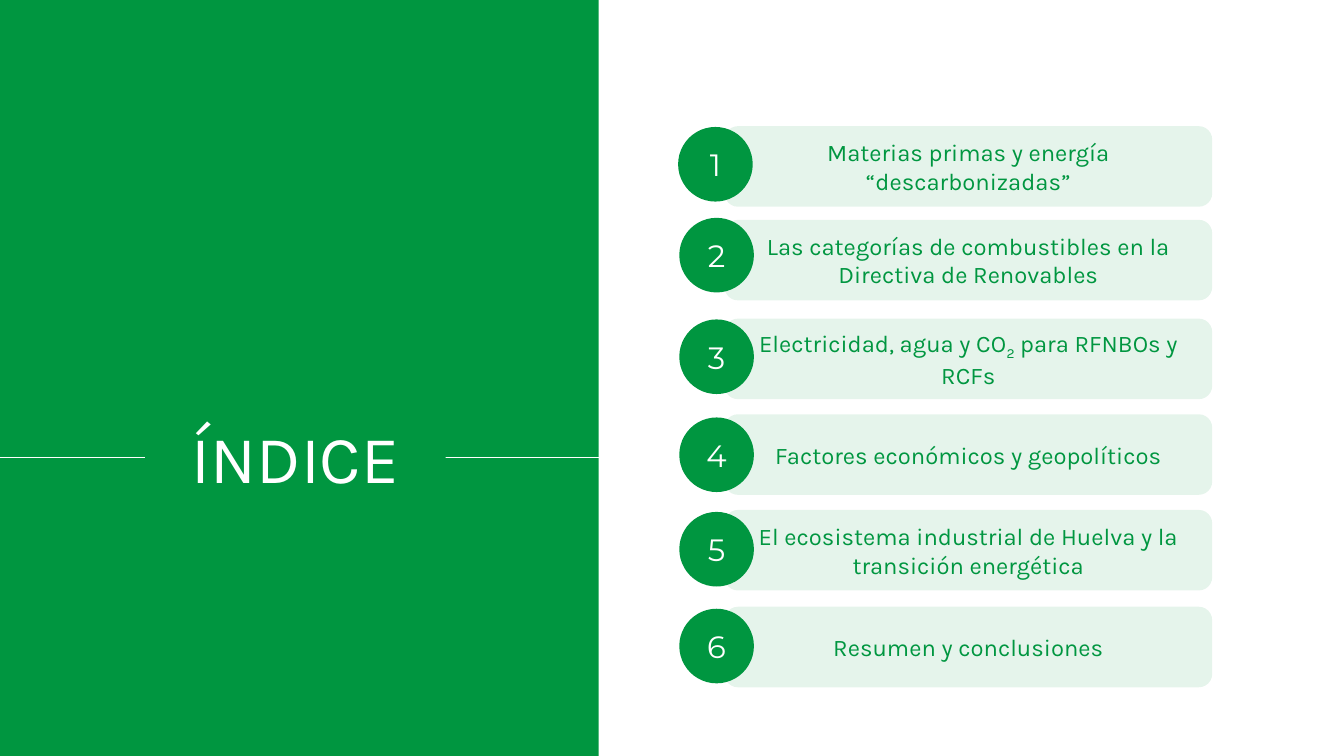
from dataclasses import dataclass

from lxml import etree
from pptx import Presentation
from pptx.dml.color import RGBColor
from pptx.enum.shapes import MSO_CONNECTOR, MSO_SHAPE
from pptx.enum.text import MSO_ANCHOR, MSO_AUTO_SIZE, PP_ALIGN
from pptx.oxml.ns import qn
from pptx.shapes.autoshape import Shape
from pptx.slide import Slide
from pptx.text.text import _Paragraph as Paragraph
from pptx.util import Cm, Pt

RECTANGLE = MSO_SHAPE.RECTANGLE
ROUNDED = MSO_SHAPE.ROUNDED_RECTANGLE
OVAL = MSO_SHAPE.OVAL
STRAIGHT = MSO_CONNECTOR.STRAIGHT
CENTER = PP_ALIGN.CENTER
MIDDLE = MSO_ANCHOR.MIDDLE
TOP = MSO_ANCHOR.TOP
FIT_SHAPE = MSO_AUTO_SIZE.SHAPE_TO_FIT_TEXT

GREEN = "009640"
WHITE = "FFFFFF"
PANEL_WIDTH = 15.09
SLIDE_HEIGHT = 19.05
RULE_Y = 11.53
BADGE_SIZE = 1.88
BAR_LEFT, BAR_WIDTH, BAR_HEIGHT = 18.26, 12.29, 2.03
BAR_OPACITY = 10


@dataclass(frozen=True)
class Entry:
    """An index entry; every second piece of its text is a subscript."""
    badge_top: float
    bar_top: float
    pieces: tuple[str, ...]
    badge_left: float = 17.12


ENTRIES = (
    Entry(3.2, 3.18, ("Materias primas y energía “descarbonizadas”",), 17.09),
    Entry(5.49, 5.54, ("Las categorías de combustibles en la Directiva de Renovables",)),
    Entry(8.05, 8.03, ("Electricidad, agua y CO", "2", " para RFNBOs y RCFs")),
    Entry(10.52, 10.44, ("Factores económicos y geopolíticos",)),
    Entry(12.9, 12.85, ("El ecosistema industrial de Huelva y la transición energética",)),
    Entry(15.34, 15.29, ("Resumen y conclusiones",)),
)


def color(value: str) -> RGBColor:
    return RGBColor.from_string(value)


def format_paragraph(paragraph: Paragraph, font: str, size: float, ink: str) -> None:
    paragraph.alignment = CENTER
    paragraph.font.name = font
    paragraph.font.size = Pt(size)
    paragraph.font.color.rgb = color(ink)


def add_green_shape(slide: Slide, kind: MSO_SHAPE, left: float, top: float,
                    width: float, height: float) -> Shape:
    shape = slide.shapes.add_shape(kind, Cm(left), Cm(top), Cm(width), Cm(height))
    shape.shadow.inherit = False
    shape.fill.solid()
    shape.fill.fore_color.rgb = color(GREEN)
    shape.line.fill.background()
    shape.text_frame.word_wrap = True
    shape.text_frame.vertical_anchor = MIDDLE
    return shape


def set_opacity(shape: Shape, percent: int) -> None:
    fill_color = shape._element.spPr.find(qn("a:solidFill")).find(qn("a:srgbClr"))
    etree.SubElement(fill_color, qn("a:alpha")).set("val", str(percent * 1000))


def add_rule(slide: Slide) -> None:
    rule = slide.shapes.add_connector(STRAIGHT, Cm(0), Cm(RULE_Y), Cm(PANEL_WIDTH), Cm(RULE_Y))
    rule.line.color.rgb = color(WHITE)
    rule.line.width = Pt(0.5)
    etree.SubElement(rule._element.spPr, qn("a:effectLst"))


def place_title(slide: Slide) -> None:
    """Fill the title and bring it in front of the rule, which it interrupts."""
    title = slide.shapes.title
    title.left, title.top, title.width, title.height = Cm(3.66), Cm(10.36), Cm(7.57), Cm(2.31)
    title.fill.solid()
    title.fill.fore_color.rgb = color(GREEN)
    title.text_frame.text = "ÍNDICE"
    title.text_frame.vertical_anchor = TOP
    title.text_frame.word_wrap = True
    title.text_frame.auto_size = FIT_SHAPE
    format_paragraph(title.text_frame.paragraphs[0], "Karla", 48, WHITE)
    slide.shapes._spTree.append(title._element)


def add_entry(slide: Slide, number: int, entry: Entry) -> None:
    badge = add_green_shape(slide, OVAL, entry.badge_left, entry.badge_top,
                            BADGE_SIZE, BADGE_SIZE)
    badge.text_frame.text = str(number)
    format_paragraph(badge.text_frame.paragraphs[0], "Montserrat", 22, WHITE)

    bar = add_green_shape(slide, ROUNDED, BAR_LEFT, entry.bar_top, BAR_WIDTH, BAR_HEIGHT)
    set_opacity(bar, BAR_OPACITY)
    paragraph = bar.text_frame.paragraphs[0]
    for index, piece in enumerate(entry.pieces):
        run = paragraph.add_run()
        run.text = piece
        if index % 2:
            run._r.get_or_add_rPr().set("baseline", "-25000")
    format_paragraph(paragraph, "Karla", 17, GREEN)


def main() -> None:
    presentation = Presentation()
    presentation.slide_width = Cm(33.87)
    presentation.slide_height = Cm(SLIDE_HEIGHT)
    title_only = presentation.slide_layouts.get_by_name("Title Only")
    slide = presentation.slides.add_slide(title_only)

    add_green_shape(slide, RECTANGLE, 0, 0, PANEL_WIDTH, SLIDE_HEIGHT)
    add_rule(slide)
    place_title(slide)
    for number, entry in enumerate(ENTRIES, start=1):
        add_entry(slide, number, entry)

    presentation.save("out.pptx")


if __name__ == "__main__":
    main()
